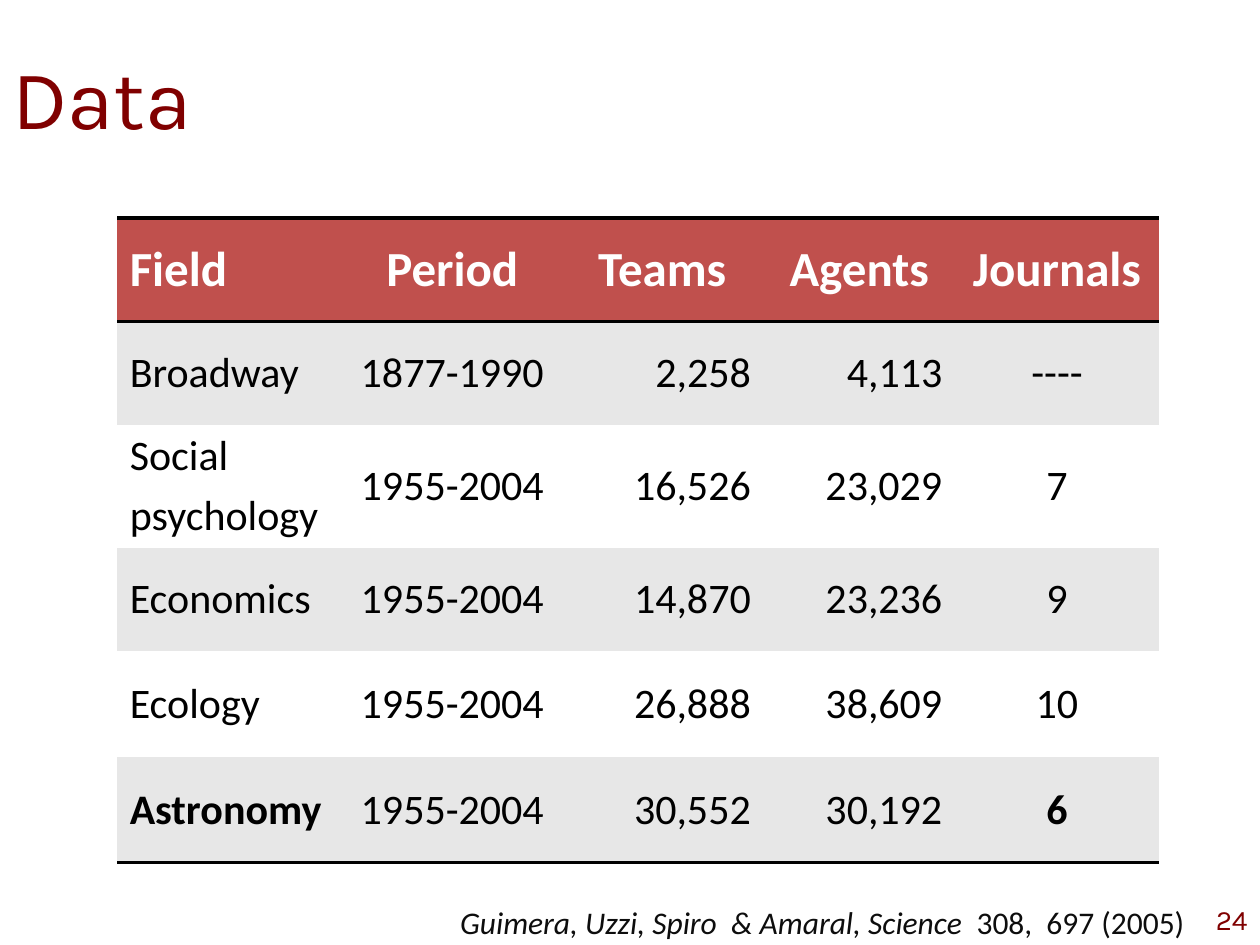
import pptx
import pptx.dml.color
import pptx.enum.text
import pptx.oxml
import pptx.oxml.ns
import pptx.util

ALIGN = pptx.enum.text.PP_ALIGN
MIDDLE = pptx.enum.text.MSO_ANCHOR.MIDDLE
UNIT = pptx.util.Inches(0.1)  # the slide is a grid of 100 columns by 75 rows
PLAIN_TABLE = "{2D5ABB26-0587-4C30-8999-92F81FD0307C}"
MAROON, RED, GREY = "800000", "C0504D", "E7E7E7"
WHITE, BLACK, INK = "FFFFFF", "000000", "0D0D0D"

COLUMN_WIDTHS = [18, 17.2, 16.1, 15.2, 16.2]
ROW_HEIGHTS = [8.2, 8.2, 9.8, 8.2, 8.4, 8.4]
COLUMN_ALIGNS = [ALIGN.LEFT, ALIGN.CENTER, ALIGN.RIGHT, ALIGN.RIGHT, ALIGN.CENTER]
ROWS = [
    ["Field", "Period", "Teams", "Agents", "Journals"],
    ["Broadway", "1877-1990", "2,258", "4,113", "----"],
    ["Social\npsychology", "1955-2004", "16,526", "23,029", "7"],
    ["Economics", "1955-2004", "14,870", "23,236", "9"],
    ["Ecology", "1955-2004", "26,888", "38,609", "10"],
    ["Astronomy", "1955-2004", "30,552", "30,192", "6"],
]


def grid(*units):
    return [round(unit * UNIT) for unit in units]


def color(value):
    return pptx.dml.color.RGBColor.from_string(value)


def style(paragraph, name, size, value, align, bold=False):
    paragraph.alignment = align
    font = paragraph.font
    font.name, font.size, font.bold = name, pptx.util.Pt(size), bold
    font.color.rgb = color(value)


def add_text(page, box, spans, name, size, value, align, anchor=MIDDLE):
    """Add one line of text; spans are pairs of text and italic."""
    frame = page.shapes.add_textbox(*grid(*box)).text_frame
    frame.word_wrap = True
    frame.vertical_anchor = anchor
    paragraph = frame.paragraphs[0]
    for text, italic in spans:
        span = paragraph.add_run()
        span.text = text
        span.font.italic = italic
    style(paragraph, name, size, value, align)


def add_rules(cell, sides):
    """Draw 2 pt black borders on the given sides, in the order T, B."""
    properties = cell._tc.get_or_add_tcPr()
    for position, side in enumerate(sides):
        properties.insert(position, pptx.oxml.parse_xml(
            f'<a:ln{side} {pptx.oxml.ns.nsdecls("a")} w="{pptx.util.Pt(2)}">'
            f'<a:solidFill><a:srgbClr val="{BLACK}"/></a:solidFill></a:ln{side}>'))


def fill_cell(cell, text, row, column):
    header, last = row == 0, row == len(ROWS) - 1
    edge_column = column in (0, len(COLUMN_WIDTHS) - 1)
    cell.vertical_anchor = MIDDLE
    cell.fill.solid()
    cell.fill.fore_color.rgb = color(RED if header else GREY if row % 2 else WHITE)
    cell.text = text
    align = ALIGN.CENTER if header and column else COLUMN_ALIGNS[column]
    for number, paragraph in enumerate(cell.text_frame.paragraphs):
        if number:
            paragraph.space_before = pptx.util.Pt(4.8)
        style(paragraph, "Calibri", 28 if header else 24, WHITE if header else BLACK,
              align, bold=header or (last and edge_column))
    add_rules(cell, "TB" if header else "B" if last else "")


def add_data_table(page, left, top):
    frame = page.shapes.add_table(
        len(ROWS), len(COLUMN_WIDTHS),
        *grid(left, top, sum(COLUMN_WIDTHS), sum(ROW_HEIGHTS)))
    table = frame.table
    table.horz_banding = False
    table._tbl.tblPr.find(pptx.oxml.ns.qn("a:tableStyleId")).text = PLAIN_TABLE
    for column, width in zip(table.columns, grid(*COLUMN_WIDTHS)):
        column.width = width
    for row, height in zip(table.rows, grid(*ROW_HEIGHTS)):
        row.height = height
    for row, texts in enumerate(ROWS):
        for column, text in enumerate(texts):
            fill_cell(table.cell(row, column), text, row, column)


def add_footer(page):
    citation = [("Guimera, Uzzi, Spiro  & Amaral, Science  ", True),
                ("308,  697 (2005)", False)]
    add_text(page, (31.4, 71.2, 63.6, 4), citation, "Calibri", 18, INK,
             ALIGN.RIGHT, pptx.enum.text.MSO_ANCHOR.TOP)
    add_text(page, (76.7, 71, 23.3, 4), [("24", False)], "Karla", 16, MAROON, ALIGN.RIGHT)


def main():
    deck = pptx.Presentation()
    deck.slide_width, deck.slide_height = grid(100, 75)
    page = deck.slides.add_slide(deck.slide_layouts[6])
    add_text(page, (0, 0, 95, 15.3), [("Data", False)], "Karla", 48, MAROON, ALIGN.LEFT)
    add_data_table(page, 9.3, 17.3)
    add_footer(page)
    deck.save("out.pptx")


if __name__ == "__main__":
    main()
